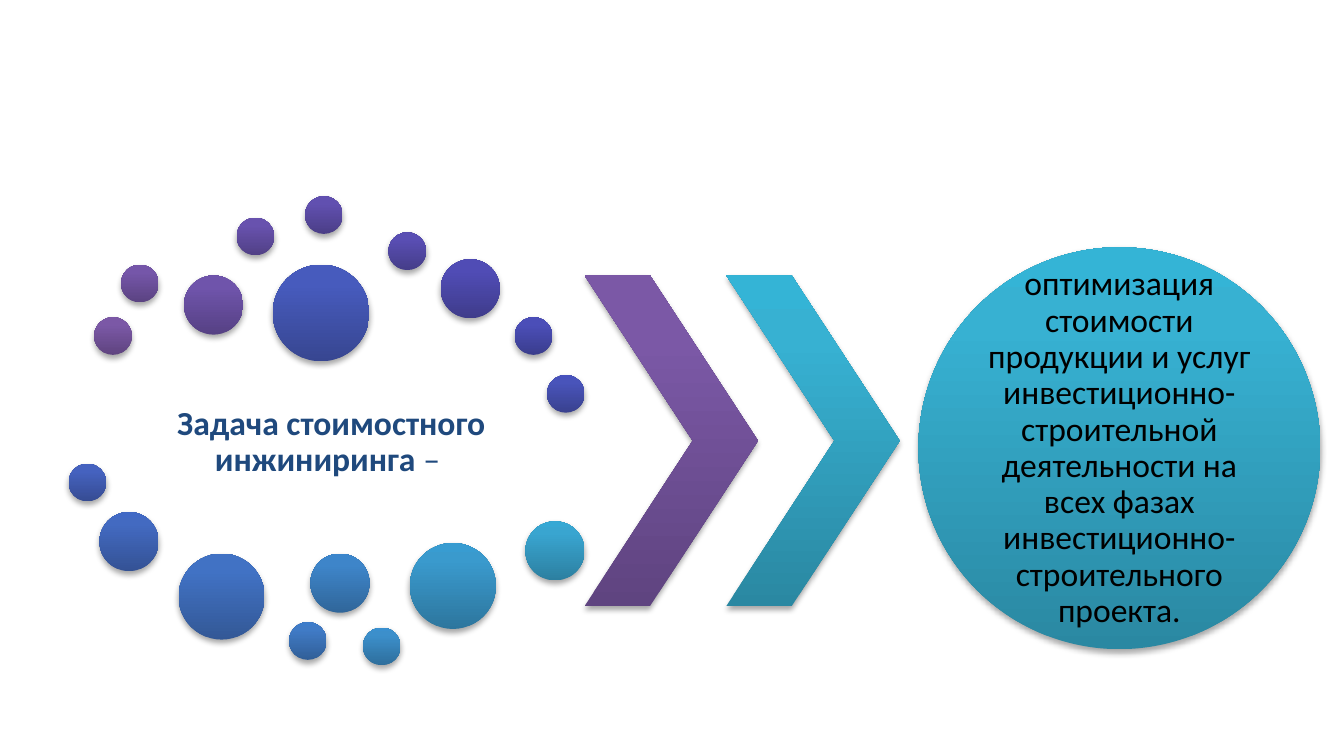
import colorsys
import copy
from dataclasses import dataclass

import pptx
import pptx.dml.color
import pptx.enum.shapes
import pptx.enum.text
import pptx.oxml
import pptx.oxml.ns
import pptx.util

Pt = pptx.util.Pt
RGB = pptx.dml.color.RGBColor
KIND = pptx.enum.shapes.MSO_SHAPE


@dataclass(frozen=True)
class Theme:
    """Colours, type and dot sizes of the slide."""
    font: str = "Calibri"
    size: int = 18
    title: str = "1F497D"
    ink: str = "000000"
    start: tuple = ("5F4480", "7B58A6", "7C57A8")
    end: tuple = ("2A88A2", "37B1D2", "34B4D6")
    stops: tuple = (0, 0.8, 1)
    small: float = 20.2
    mid: float = 31.7
    large: float = 46.1
    huge: float = 51.8


THEME = Theme()
SHADOW = (
    '<a:effectLst xmlns:a="http://schemas.openxmlformats.org/drawingml/2006/main">'
    '<a:outerShdw blurRad="40000" dist="23000" dir="5400000" rotWithShape="0">'
    '<a:srgbClr val="000000"><a:alpha val="35000"/></a:srgbClr>'
    '</a:outerShdw></a:effectLst>'
)

S, M, L, H = THEME.small, THEME.mid, THEME.large, THEME.huge
DOTS = [
    (13.7, 64.8, S), (28.1, 36.7, S), (61.9, 42.5, M),
    (90, 11.5, S), (126.7, 0, S), (171.4, 19.4, S),
    (199.4, 33.8, M), (239, 64.8, S), (256.3, 95.8, S),
    (109.4, 36.7, H), (0, 143.3, S), (16.6, 169.2, M),
    (59, 191.5, L), (118.1, 228.2, S), (129.6, 191.5, M),
    (157.7, 231.1, S), (182.9, 185.8, L), (244.8, 174.2, M),
]


def blend(first, last, part):
    """Return the colour a given part of the way between two, by hue."""
    ends = [colorsys.rgb_to_hls(*(c / 255 for c in RGB.from_string(code)))
            for code in (first, last)]
    tone = [a + (b - a) * part for a, b in zip(*ends)]
    return RGB(*(round(c * 255) for c in colorsys.hls_to_rgb(*tone)))


def add_form(slide, kind, box, part):
    """Add a shaded shape coloured by its part of the theme sweep."""
    form = slide.shapes.add_shape(kind, *map(Pt, box))
    form.fill.gradient()
    form.fill.gradient_angle = 90
    first = form._element.spPr.find(".//" + pptx.oxml.ns.qn("a:gs"))
    first.addnext(copy.deepcopy(first))
    for stop, place, dark, light in zip(
            form.fill.gradient_stops, THEME.stops, THEME.start, THEME.end):
        stop.position = place
        stop.color.rgb = blend(dark, light, part)
    form.line.fill.background()
    form._element.spPr.append(pptx.oxml.parse_xml(SHADOW))
    return form


def add_text(slide, box, runs, color, inset):
    """Add one centred paragraph made of (text, bold) runs."""
    frame = slide.shapes.add_textbox(*map(Pt, box)).text_frame
    frame.word_wrap = True
    frame.vertical_anchor = pptx.enum.text.MSO_ANCHOR.MIDDLE
    frame.margin_left = frame.margin_right = Pt(inset)
    frame.margin_top = frame.margin_bottom = Pt(inset)
    para = frame.paragraphs[0]
    para.alignment = pptx.enum.text.PP_ALIGN.CENTER
    para.line_spacing = 0.9
    para.font.name = THEME.font
    para.font.size = Pt(THEME.size)
    para.font.color.rgb = RGB.from_string(color)
    for text, bold in runs:
        run = para.add_run()
        run.text = text
        run.font.bold = bold


def draw_cloud(slide, left, top):
    """Draw the task title ringed by dots."""
    add_text(slide, (left + 14.4, top + 86.4, 252.7, 91.4),
             [("Задача стоимостного инжиниринга ", True), ("– ", False)],
             THEME.title, 2)
    for step, (x, y, size) in enumerate(DOTS):
        add_form(slide, KIND.OVAL, (left + x, top + y, size, size),
                 step / len(DOTS))


def draw_arrows(slide, left, top, width, height):
    """Draw the two chevrons across the box."""
    wide = 92.9
    for part in (0, 1):
        box = (left + part * (width - wide), top, wide, height)
        add_form(slide, KIND.CHEVRON, box, part).adjustments[0] = 0.623


def draw_goal(slide, left, top, size):
    """Draw the goal circle with its text."""
    add_form(slide, KIND.OVAL, (left, top, size, size), 1)
    gap = 31.7
    side = size - 2 * gap
    add_text(slide, (left + gap, top + gap, side, side),
             [("оптимизация стоимости продукции и услуг "
               "инвестиционно-строительной деятельности на всех фазах "
               "инвестиционно- строительного проекта.", False)],
             THEME.ink, 0)


def main():
    """Build and save the slide."""
    deck = pptx.Presentation()
    deck.slide_width, deck.slide_height = Pt(720), Pt(405)
    slide = deck.slides.add_slide(deck.slide_layouts[6])
    draw_cloud(slide, 36.7, 105.1)
    draw_arrows(slide, 313.2, 147.6, 168.8, 177.1)
    draw_goal(slide, 492, 132.5, 215.3)
    deck.save("out.pptx")


if __name__ == "__main__":
    main()
